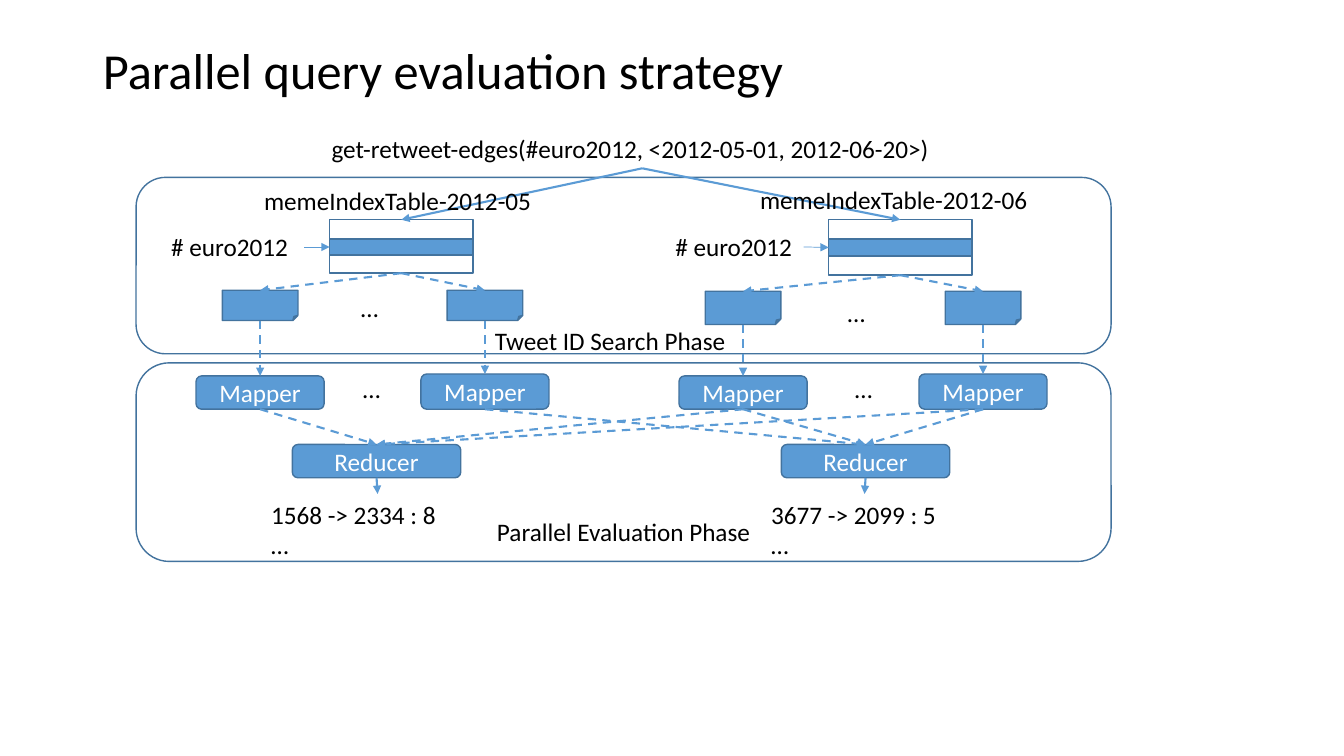
from dataclasses import dataclass

from lxml import etree
from pptx import Presentation
from pptx.dml.color import RGBColor
from pptx.enum.dml import MSO_LINE
from pptx.enum.shapes import MSO_CONNECTOR, MSO_SHAPE
from pptx.enum.text import MSO_ANCHOR, MSO_AUTO_SIZE, PP_ALIGN
from pptx.oxml.ns import qn
from pptx.util import Inches, Pt


@dataclass(frozen=True)
class Theme:
    font: str = "Calibri"
    text: RGBColor = RGBColor(0, 0, 0)
    light_text: RGBColor = RGBColor(255, 255, 255)
    fill: RGBColor = RGBColor(0x5B, 0x9B, 0xD5)
    border: RGBColor = RGBColor(0x43, 0x73, 0x9E)
    title_size: int = 36
    body_size: int = 18
    border_width: float = 1
    arrow_width: float = 1.5
    thin_arrow_width: float = 0.5


@dataclass(frozen=True)
class Partition:
    name: str
    name_box: tuple
    key_box: tuple
    table_left: float
    table_height: float
    row_height: float
    chunk_centers: tuple
    chunk_top: float
    chunk_height: float
    chunk_dots: tuple
    mapper_dots: tuple
    reducer_left: float
    result: str
    result_box: tuple


THEME = Theme()
TOP, LEFT, BOTTOM, RIGHT = range(4)
TABLE_TOP, TABLE_WIDTH, ROW_TOP = 2.18, 1.42, 2.37
CHUNK_WIDTH, MAPPER_WIDTH = 0.75, 1.27
MAPPER_BOTTOM = 4.06
MAPPER_HEIGHTS = (0.33, 0.35)
LINE_HEIGHT, DOTS_WIDTH = 0.4, 0.54

PARTITIONS = (
    Partition("memeIndexTable-2012-05", (2.52, 1.79, 3.08), (1.6, 2.25, 1.42),
              3.27, 0.53, 0.16, (2.58, 4.81), 2.88, 0.3,
              (3.48, 2.85), (3.5, 3.65), 2.9,
              "1568 -> 2334 : 8\n…", (2.59, 4.9, 2.31, 0.71)),
    Partition("memeIndexTable-2012-06", (7.44, 1.78, 3.08), (6.6, 2.25, 1.37),
              8.22, 0.55, 0.17, (7.37, 9.75), 2.89, 0.33,
              (8.31, 2.9), (8.38, 3.65), 7.75,
              "3677 -> 2099 : 5\n…", (7.55, 4.9, 2.05, 0.71)),
)


def format_text(text_frame, size, color, alignment):
    for paragraph in text_frame.paragraphs:
        paragraph.alignment = alignment
        for run in paragraph.runs:
            run.font.name = THEME.font
            run.font.size = Pt(size)
            run.font.color.rgb = color


def add_title(slide, text):
    title = slide.shapes.title
    title.left, title.top = Inches(0.92), Inches(0)
    title.width, title.height = Inches(11.82), Inches(1.45)
    title.text_frame.text = text
    title.text_frame.vertical_anchor = MSO_ANCHOR.MIDDLE
    title.text_frame.paragraphs[0].line_spacing = 0.9
    format_text(title.text_frame, THEME.title_size, THEME.text, PP_ALIGN.LEFT)


def add_label(slide, text, left, top, width, height=LINE_HEIGHT):
    label = slide.shapes.add_textbox(
        Inches(left), Inches(top), Inches(width), Inches(height))
    label.text_frame.word_wrap = True
    label.text_frame.auto_size = MSO_AUTO_SIZE.SHAPE_TO_FIT_TEXT
    label.text_frame.text = text
    format_text(label.text_frame, THEME.body_size, THEME.text, PP_ALIGN.LEFT)
    return label


def add_box(slide, kind, left, top, width, height, text="", filled=True):
    box = slide.shapes.add_shape(
        kind, Inches(left), Inches(top), Inches(width), Inches(height))
    box.shadow.inherit = False
    if filled:
        box.fill.solid()
        box.fill.fore_color.rgb = THEME.fill
    else:
        box.fill.background()
    box.line.color.rgb = THEME.border
    box.line.width = Pt(THEME.border_width)
    if text:
        box.text_frame.text = text
        box.text_frame.vertical_anchor = (
            MSO_ANCHOR.MIDDLE if filled else MSO_ANCHOR.BOTTOM)
        color = THEME.light_text if filled else THEME.text
        format_text(box.text_frame, THEME.body_size, color, PP_ALIGN.CENTER)
    return box


def add_arrow(slide, source, target, dashed=True, width=THEME.arrow_width,
              sites=(BOTTOM, TOP)):
    arrow = slide.shapes.add_connector(MSO_CONNECTOR.STRAIGHT, 0, 0, 0, 0)
    arrow.begin_connect(source, sites[0])
    arrow.end_connect(target, sites[1])
    arrow.line.color.rgb = THEME.fill
    arrow.line.width = Pt(width)
    if dashed:
        arrow.line.dash_style = MSO_LINE.DASH
    line = arrow.line._get_or_add_ln()
    etree.SubElement(line, qn("a:tailEnd"), type="triangle")
    etree.SubElement(arrow._element.spPr, qn("a:effectLst"))


def add_index_table(slide, partition, query):
    table = add_box(slide, MSO_SHAPE.RECTANGLE, partition.table_left, TABLE_TOP,
                    TABLE_WIDTH, partition.table_height, filled=False)
    row = add_box(slide, MSO_SHAPE.RECTANGLE, partition.table_left, ROW_TOP,
                  TABLE_WIDTH, partition.row_height)
    add_arrow(slide, query, table, dashed=False)
    add_label(slide, partition.name, *partition.name_box)
    key = add_label(slide, "# euro2012", *partition.key_box)
    add_arrow(slide, key, row, dashed=False, width=THEME.thin_arrow_width,
              sites=(RIGHT, LEFT))
    return table


def add_mappers(slide, partition, table):
    mappers = []
    for center, height in zip(partition.chunk_centers, MAPPER_HEIGHTS):
        chunk = add_box(slide, MSO_SHAPE.FOLDED_CORNER, center - CHUNK_WIDTH / 2,
                        partition.chunk_top, CHUNK_WIDTH, partition.chunk_height)
        mapper = add_box(slide, MSO_SHAPE.ROUNDED_RECTANGLE,
                         center - MAPPER_WIDTH / 2, MAPPER_BOTTOM - height,
                         MAPPER_WIDTH, height, "Mapper")
        add_arrow(slide, table, chunk)
        add_arrow(slide, chunk, mapper)
        mappers.append(mapper)
    for left, top in (partition.chunk_dots, partition.mapper_dots):
        add_label(slide, "…", left, top, DOTS_WIDTH)
    return mappers


def add_reducer(slide, partition, mappers):
    reducer = add_box(slide, MSO_SHAPE.ROUNDED_RECTANGLE, partition.reducer_left,
                      4.41, 1.67, 0.33, "Reducer")
    for mapper in mappers:
        add_arrow(slide, mapper, reducer)
    result = add_label(slide, partition.result, *partition.result_box)
    add_arrow(slide, reducer, result)


def main():
    presentation = Presentation()
    presentation.slide_width = Inches(13.33)
    presentation.slide_height = Inches(7.5)
    slide = presentation.slides.add_slide(presentation.slide_layouts[5])

    add_title(slide, "Parallel query evaluation strategy")
    add_box(slide, MSO_SHAPE.ROUNDED_RECTANGLE, 1.35, 1.76, 9.67, 1.75,
            filled=False)
    add_box(slide, MSO_SHAPE.ROUNDED_RECTANGLE, 1.35, 3.6, 9.67, 1.97,
            "Parallel Evaluation Phase", filled=False)
    query = add_label(
        slide, "get-retweet-edges(#euro2012, <2012-05-01, 2012-06-20>)",
        3.19, 1.27, 6.36)

    mappers = []
    for partition in PARTITIONS:
        table = add_index_table(slide, partition, query)
        mappers += add_mappers(slide, partition, table)

    first, second, third, fourth = mappers
    reducer_inputs = ((first, third, fourth), (second, third, fourth))
    for partition, inputs in zip(PARTITIONS, reducer_inputs):
        add_reducer(slide, partition, inputs)
    add_label(slide, "Tweet ID Search Phase", 4.81, 3.18, 2.87)

    presentation.save("out.pptx")


if __name__ == "__main__":
    main()
